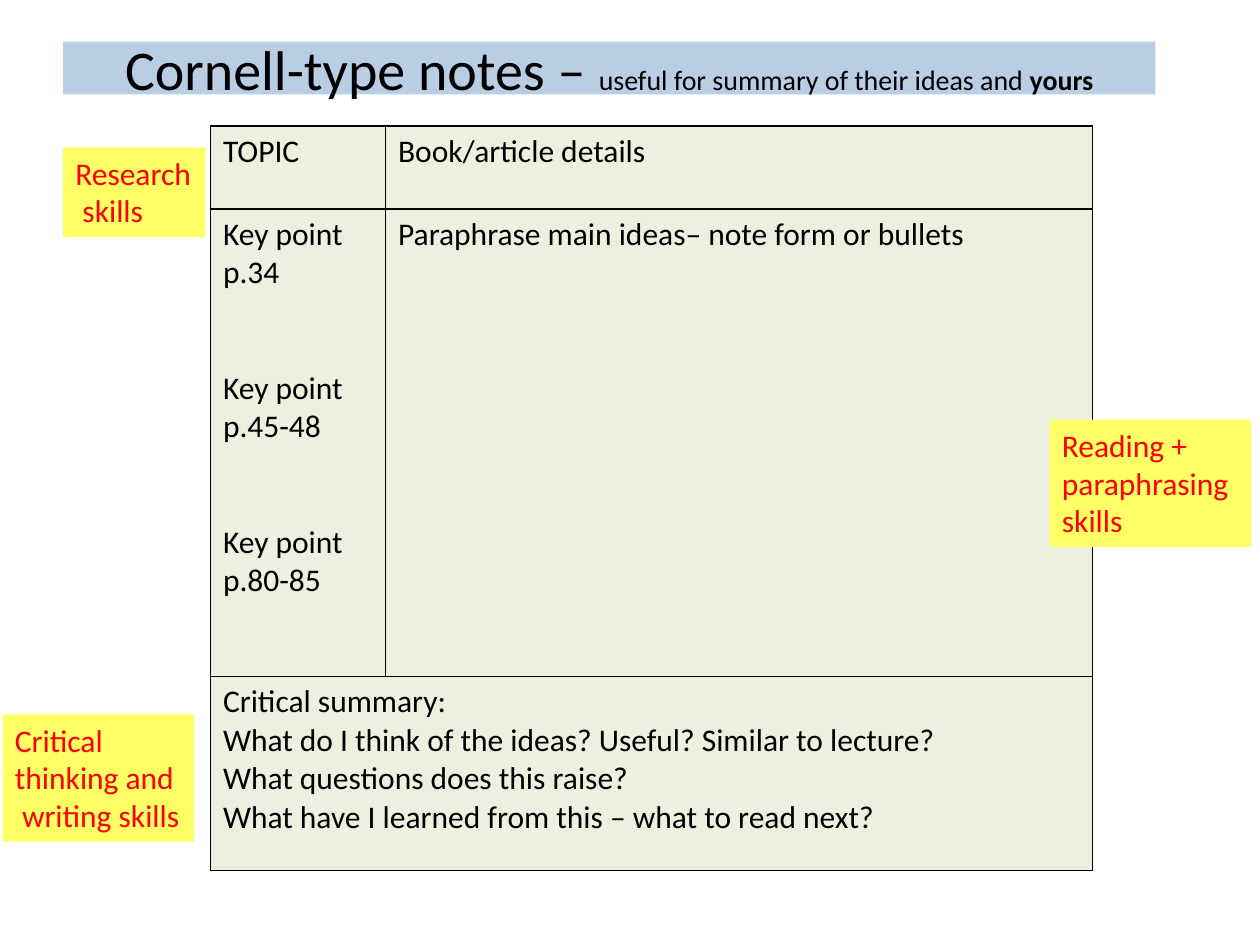
import pptx
import pptx.util
import pptx.dml.color
import pptx.enum.text
from dataclasses import dataclass
from lxml import etree
from pptx.util import Inches

NS = "http://schemas.openxmlformats.org/drawingml/2006/main"


@dataclass(frozen=True)
class Theme:
    font: str = "Calibri"
    ink: str = "000000"
    alert: str = "FF0000"
    band: str = "B9CDE5"
    note: str = "FFFF66"
    cell: str = "EBF1DE"
    head: int = 32
    sub: int = 16
    body: int = 18
    gap: int = 44
    rule: int = 1


THEME = Theme()

COLS = [1.39, 5.61]
ROWS = [0.66, 3.71, 1.54]
CELLS = {
    (0, 0): ["TOPIC"],
    (0, 1): ["Book/article details"],
    (1, 0): ["Key point", "p.34", "Key point", "p.45-48", "Key point", "p.80-85"],
    (1, 1): ["Paraphrase main ideas– note form or bullets"],
    (2, 0): [
        "Critical summary:",
        "What do I think of the ideas? Useful? Similar to lecture?",
        "What questions does this raise?",
        "What have I learned from this – what to read next?",
    ],
}
NOTES = [
    ((0.5, 1.17, 1.13, 0.71), ["Research", " skills"]),
    ((0.02, 5.67, 1.52, 1.01), ["Critical", "thinking and", " writing skills"]),
    ((8.33, 3.33, 1.6, 1.01), ["Reading +", "paraphrasing", "skills"]),
]


def rgb(code):
    return pptx.dml.color.RGBColor.from_string(code)


def assign(item, values):
    for name, value in values.items():
        setattr(item, name, value)


def paint(item, code):
    item.fill.solid()
    item.fill.fore_color.rgb = rgb(code)


def place(shape, box):
    names = ("left", "top", "width", "height")
    assign(shape, dict(zip(names, map(Inches, box))))


def add_run(para, text, size, code, bold=False):
    run = para.add_run()
    run.text = text
    values = {"name": THEME.font, "size": pptx.util.Pt(size), "bold": bold}
    assign(run.font, values)
    run.font.color.rgb = rgb(code)


def write(frame, lines, code):
    """Put each line in its own paragraph and return the paragraphs."""
    for i, line in enumerate(lines):
        para = frame.add_paragraph() if i else frame.paragraphs[0]
        add_run(para, line, THEME.body, code)
    return frame.paragraphs


def add_title(slide):
    title = slide.shapes.title
    place(title, (0.5, 0.33, 8.67, 0.42))
    paint(title, THEME.band)
    frame = title.text_frame
    assign(frame, {
        "auto_size": pptx.enum.text.MSO_AUTO_SIZE.NONE,
        "vertical_anchor": pptx.enum.text.MSO_ANCHOR.MIDDLE,
    })
    para = frame.paragraphs[0]
    para.alignment = pptx.enum.text.PP_ALIGN.CENTER
    add_run(para, "Cornell-type notes – ", THEME.head, THEME.ink)
    add_run(para, "useful for summary of their ideas and ", THEME.sub, THEME.ink)
    add_run(para, "yours", THEME.sub, THEME.ink, True)


def add_edges(cell):
    props = cell._tc.get_or_add_tcPr()
    width = str(pptx.util.Pt(THEME.rule))
    for side in "LRTB":
        line = etree.SubElement(props, f"{{{NS}}}ln{side}", w=width)
        fill = etree.SubElement(line, f"{{{NS}}}solidFill")
        etree.SubElement(fill, f"{{{NS}}}srgbClr", val=THEME.ink)


def add_grid(slide):
    box = map(Inches, (1.67, 1, sum(COLS), sum(ROWS)))
    table = slide.shapes.add_table(len(ROWS), len(COLS), *box).table
    assign(table, {"first_row": False, "horz_banding": False})
    for col, width in zip(table.columns, COLS):
        col.width = Inches(width)
    for row, height in zip(table.rows, ROWS):
        row.height = Inches(height)
    for cell in table.iter_cells():
        add_edges(cell)
        paint(cell, THEME.cell)
    table.cell(2, 0).merge(table.cell(2, 1))
    for spot, lines in CELLS.items():
        paras = write(table.cell(*spot).text_frame, lines, THEME.ink)
        if spot == (1, 0):
            for para in paras[2::2]:
                para.space_before = pptx.util.Pt(THEME.gap)


def add_note(slide, box, lines):
    note = slide.shapes.add_textbox(*map(Inches, box))
    paint(note, THEME.note)
    assign(note.text_frame, {
        "word_wrap": False,
        "auto_size": pptx.enum.text.MSO_AUTO_SIZE.SHAPE_TO_FIT_TEXT,
    })
    write(note.text_frame, lines, THEME.alert)


def main():
    deck = pptx.Presentation()
    assign(deck, {"slide_width": Inches(10), "slide_height": Inches(7.5)})
    slide = deck.slides.add_slide(deck.slide_layouts.get_by_name("Title Only"))
    add_grid(slide)
    add_title(slide)
    for box, lines in NOTES:
        add_note(slide, box, lines)
    deck.save("out.pptx")


if __name__ == "__main__":
    main()
